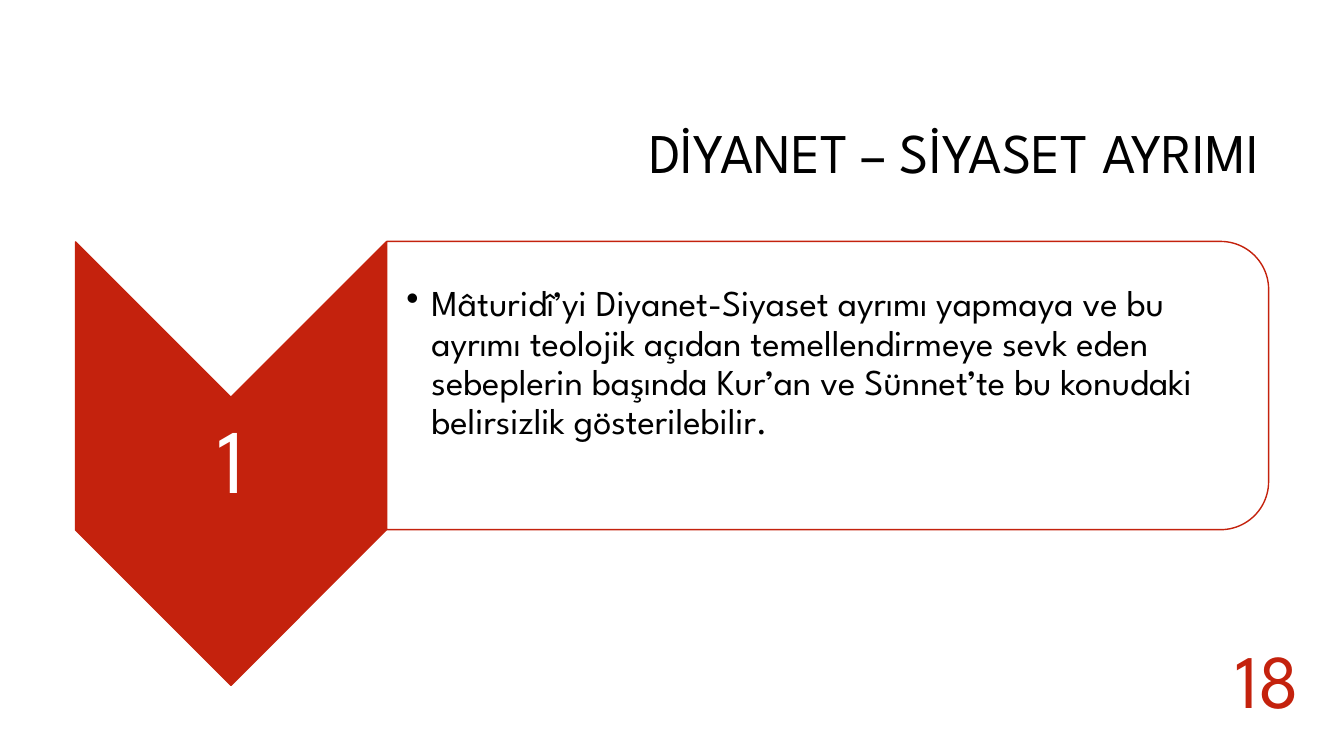
from lxml import etree
from pptx import Presentation
from pptx.dml.color import RGBColor
from pptx.enum.shapes import MSO_SHAPE
from pptx.enum.text import MSO_ANCHOR, PP_ALIGN
from pptx.oxml.ns import qn
from pptx.util import Pt

CHEVRON = MSO_SHAPE.CHEVRON
ROUND_TWO_CORNERS = MSO_SHAPE.ROUND_2_SAME_RECTANGLE
TOP, MIDDLE = MSO_ANCHOR.TOP, MSO_ANCHOR.MIDDLE
LEFT, CENTER, RIGHT = PP_ALIGN.LEFT, PP_ALIGN.CENTER, PP_ALIGN.RIGHT

COLORS = {"red": "C4220D", "white": "FFFFFF", "black": "000000"}


class SlideBuilder:
    """Draws styled shapes and text on one slide, with lengths in points."""

    font_name = "League Spartan"

    def __init__(self, slide):
        self.slide = slide

    def color(self, name):
        return RGBColor.from_string(COLORS[name])

    def turned_shape(self, kind, left, top, width, height, fill, opacity=100):
        shape = self.slide.shapes.add_shape(kind, Pt(left), Pt(top), Pt(width), Pt(height))
        shape.rotation = 90
        shape.shadow.inherit = False
        shape.fill.solid()
        shape.fill.fore_color.rgb = self.color(fill)
        shape.line.color.rgb = self.color("red")
        shape.line.width = Pt(1)
        if opacity < 100:
            fill_color = shape._element.spPr.find(qn("a:solidFill"))[0]
            etree.SubElement(fill_color, qn("a:alpha"), val=str(opacity * 1000))

    def text(self, text, left, top, width, height, size, color, align,
             anchor=MIDDLE, insets=(7.2, 3.6, 7.2, 3.6), spacing=0.9, wrap=True, indent=0):
        box = self.slide.shapes.add_textbox(Pt(left), Pt(top), Pt(width), Pt(height))
        frame = box.text_frame
        frame.word_wrap = wrap
        frame.vertical_anchor = anchor
        (frame.margin_left, frame.margin_top,
         frame.margin_right, frame.margin_bottom) = map(Pt, insets)
        paragraph = frame.paragraphs[0]
        paragraph.alignment = align
        paragraph.line_spacing = spacing
        if indent:
            properties = paragraph._p.get_or_add_pPr()
            properties.set("marL", str(Pt(indent)))
            properties.set("indent", str(-Pt(indent)))
            etree.SubElement(properties, qn("a:buChar"), char="•")
        run = paragraph.add_run()
        run.text = text
        run.font.name = self.font_name
        run.font.size = Pt(size)
        run.font.color.rgb = self.color(color)


def main():
    presentation = Presentation()
    presentation.slide_width, presentation.slide_height = Pt(960), Pt(540)
    builder = SlideBuilder(presentation.slides.add_slide(presentation.slide_layouts[6]))

    builder.text("DİYANET – SİYASET AYRIMI", 228.2, 60.5, 678.2, 101.5, 40, "black", RIGHT)
    builder.turned_shape(CHEVRON, 6.5, 220.3, 316.8, 221.8, "red")
    builder.text("1", 54, 283.7, 221.8, 95, 65, "white", CENTER, insets=(3.6,) * 4)
    builder.turned_shape(ROUND_TWO_CORNERS, 488.2, -39.6, 205.9, 630, "white", opacity=90)
    builder.text(
        "Mâturidî’yi Diyanet-Siyaset ayrımı yapmaya ve bu ayrımı teolojik açıdan "
        "temellendirmeye sevk eden sebeplerin başında Kur’an ve Sünnet’te bu konudaki "
        "belirsizlik gösterilebilir.",
        275.8, 182.9, 619.9, 154, 26, "black", LEFT,
        insets=(14.4, 1.4, 1.4, 1.4), indent=18)
    builder.text("18", 868.3, 448.6, 74.9, 72.7, 54, "red", CENTER,
                 anchor=TOP, spacing=1.0, wrap=False)

    presentation.save("out.pptx")


if __name__ == "__main__":
    main()
